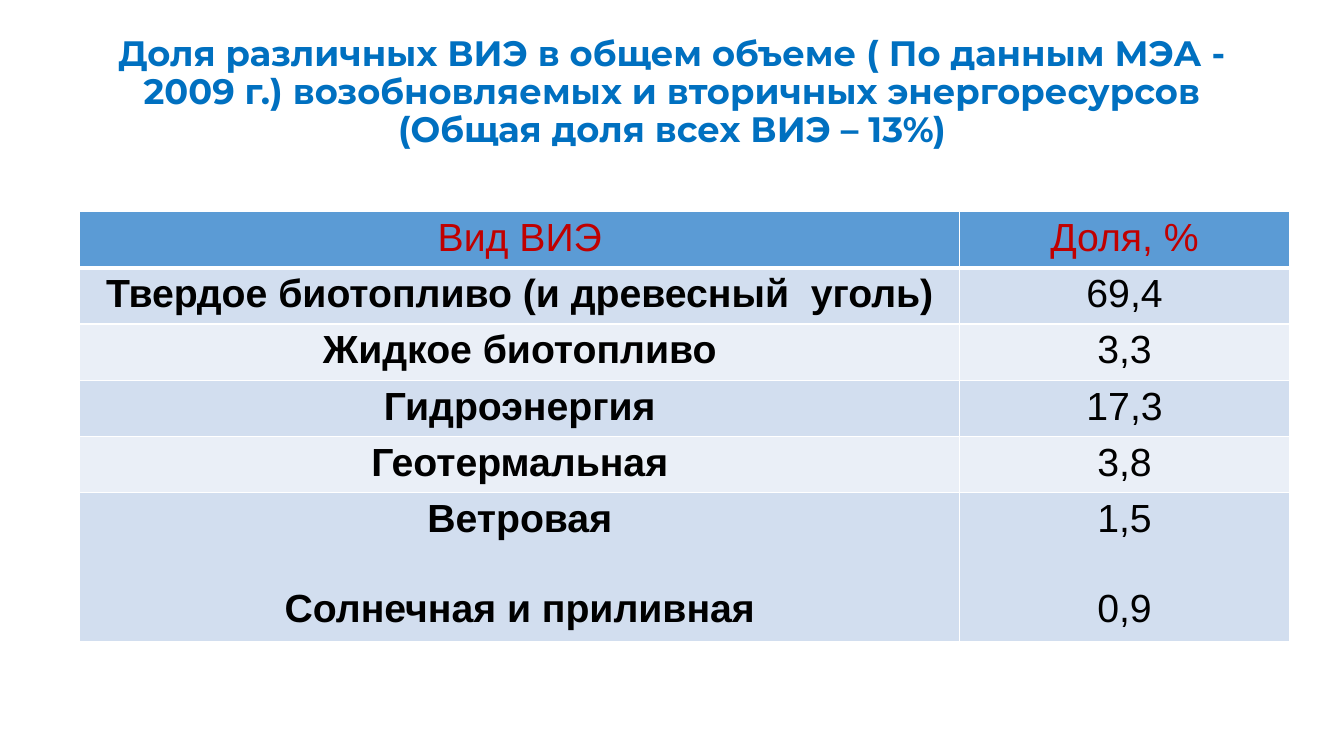
from lxml import etree
from pptx import Presentation
from pptx.dml.color import RGBColor
from pptx.enum.text import MSO_ANCHOR, PP_ALIGN
from pptx.oxml.ns import qn
from pptx.util import Pt

CENTER = PP_ALIGN.CENTER
MIDDLE = MSO_ANCHOR.MIDDLE

TITLE = ("Доля различных ВИЭ в общем объеме ( По данным МЭА - 2009 г.) "
         "возобновляемых и вторичных энергоресурсов\v(Общая доля всех ВИЭ – 13%)")
ROWS = [
    ("Вид ВИЭ", "Доля, %"),
    ("Твердое биотопливо (и древесный  уголь)", "69,4"),
    ("Жидкое биотопливо", "3,3"),
    ("Гидроэнергия", "17,3"),
    ("Геотермальная", "3,8"),
    ("Ветровая\nСолнечная и приливная", "1,5\n0,9"),
]
COLUMN_WIDTHS = (628.5, 235.5)
ROW_HEIGHT, LAST_ROW_HEIGHT = 38.4, 103.6
HEADER_FILL = "5B9BD5"
BAND_FILLS = ("EAEFF7", "D2DEEF")


def rgb(color):
    """Turn a hex string into a colour."""
    return RGBColor.from_string(color)


def style(p, font, size, color, bold):
    """Centre a paragraph and format its runs."""
    p.alignment = CENTER
    for r in p.runs:
        r.font.name = font
        r.font.size = Pt(size)
        r.font.bold = bold
        r.font.color.rgb = rgb(color)


def add_title(s, text):
    """Add the centred slide heading."""
    tf = s.shapes.add_textbox(Pt(48), Pt(21.6), Pt(864), Pt(90)).text_frame
    tf.word_wrap = True
    tf.vertical_anchor = MIDDLE
    p = tf.paragraphs[0]
    p.text = text
    p.line_spacing = 0.9
    style(p, "Montserrat", 25.2, "0070C0", True)


def set_borders(cell, top, bottom):
    """Draw white borders around a cell."""
    tc_pr = cell._tc.get_or_add_tcPr()
    for side, width in (("L", 1), ("R", 1), ("T", top), ("B", bottom)):
        ln = etree.SubElement(tc_pr, qn(f"a:ln{side}"), w=str(Pt(width)))
        fill = etree.SubElement(ln, qn("a:solidFill"))
        etree.SubElement(fill, qn("a:srgbClr"), val="FFFFFF")


def fill_cell(cell, text, row, col):
    """Write and format one table cell."""
    header = row == 0
    cell.margin_left = cell.margin_right = Pt(9.4)
    cell.margin_top = cell.margin_bottom = Pt(3.25)
    set_borders(cell, 3 if row == 1 else 1, 3 if header else 1)
    cell.fill.solid()
    cell.fill.fore_color.rgb = rgb(HEADER_FILL if header else BAND_FILLS[row % 2])
    cell.text_frame.text = text
    for i, p in enumerate(cell.text_frame.paragraphs):
        if i:
            p.space_before = Pt(33)
        style(p, "Arial", 28, "C00000" if header else "000000", not header and col == 0)


def add_share_table(s, rows):
    """Add the table of energy shares."""
    height = ROW_HEIGHT * (len(rows) - 1) + LAST_ROW_HEIGHT
    table = s.shapes.add_table(len(rows), len(COLUMN_WIDTHS), Pt(57), Pt(151.2),
                               Pt(sum(COLUMN_WIDTHS)), Pt(height)).table
    for column, width in zip(table.columns, COLUMN_WIDTHS):
        column.width = Pt(width)
    for i, texts in enumerate(rows):
        table.rows[i].height = Pt(LAST_ROW_HEIGHT if i == len(rows) - 1 else ROW_HEIGHT)
        for j, text in enumerate(texts):
            fill_cell(table.cell(i, j), text, i, j)


def main():
    """Build and save the slide."""
    prs = Presentation()
    prs.slide_width, prs.slide_height = Pt(960), Pt(540)
    s = prs.slides.add_slide(prs.slide_layouts[6])
    add_title(s, TITLE)
    add_share_table(s, ROWS)
    prs.save("out.pptx")


if __name__ == "__main__":
    main()
